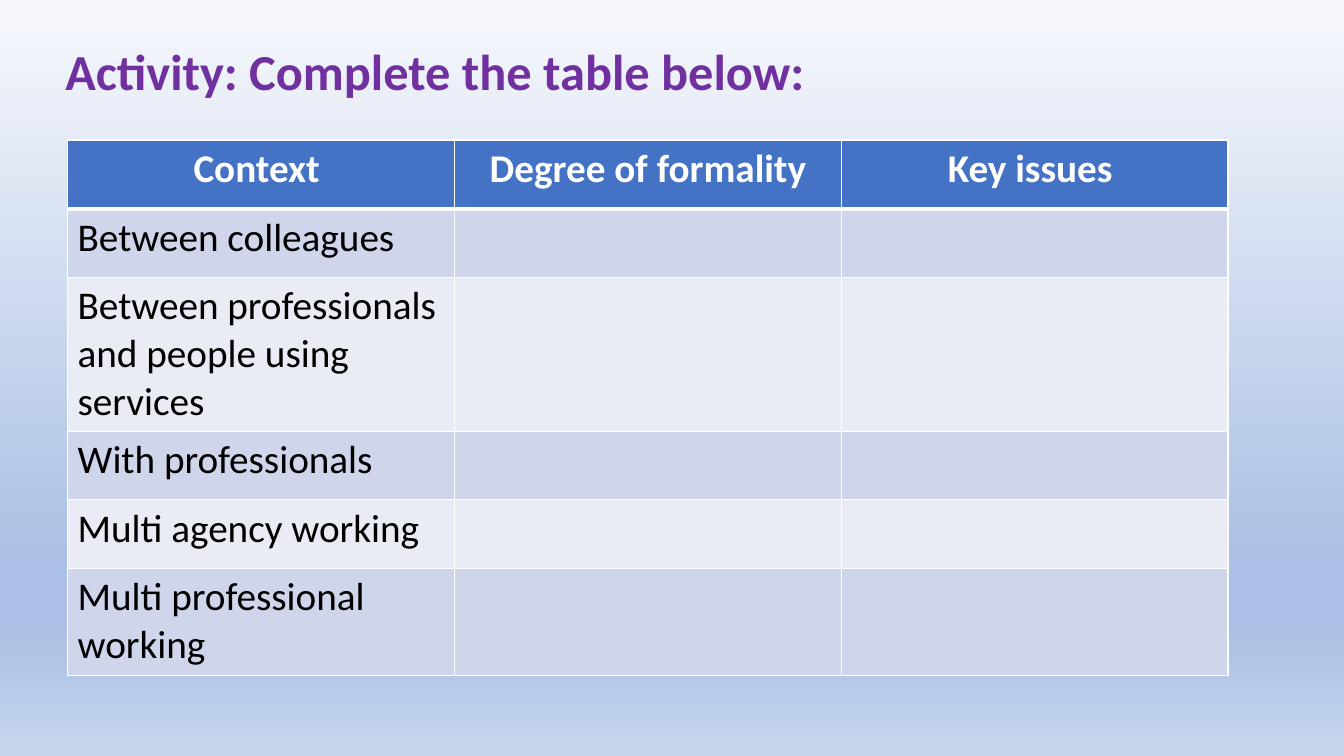
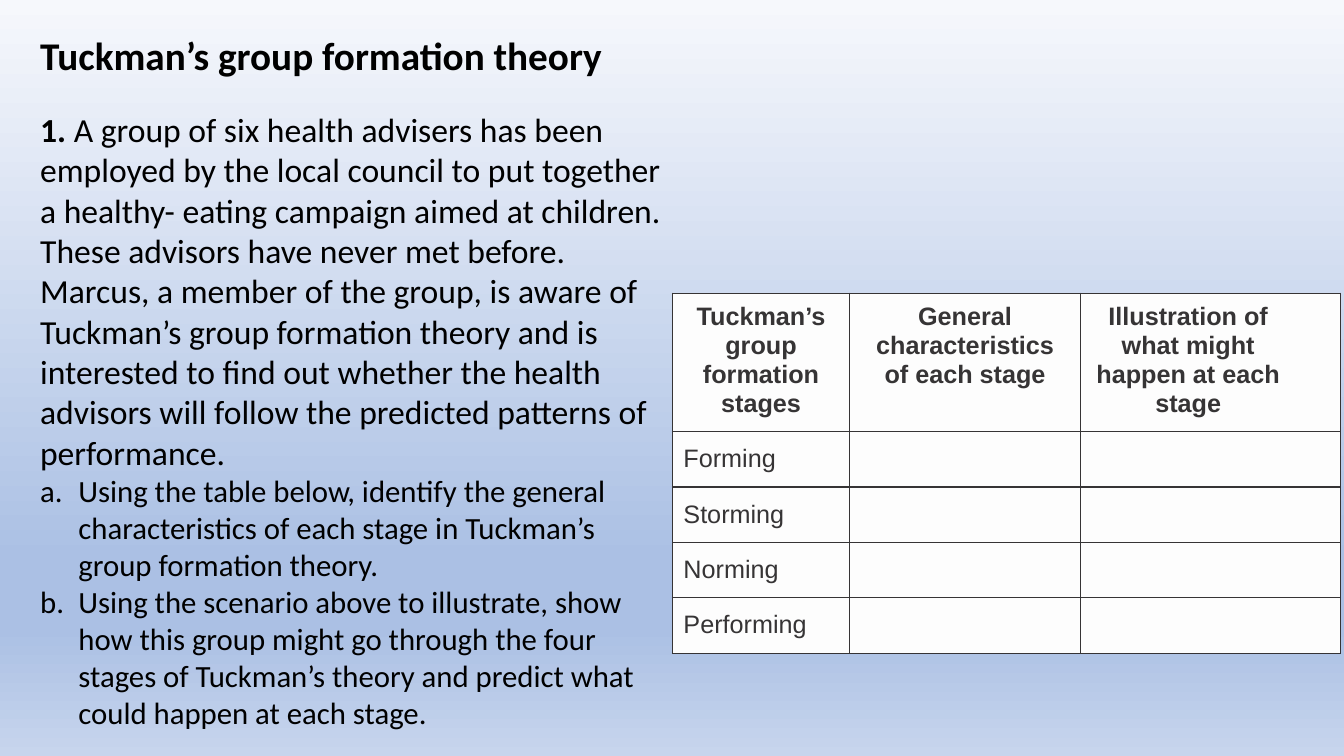
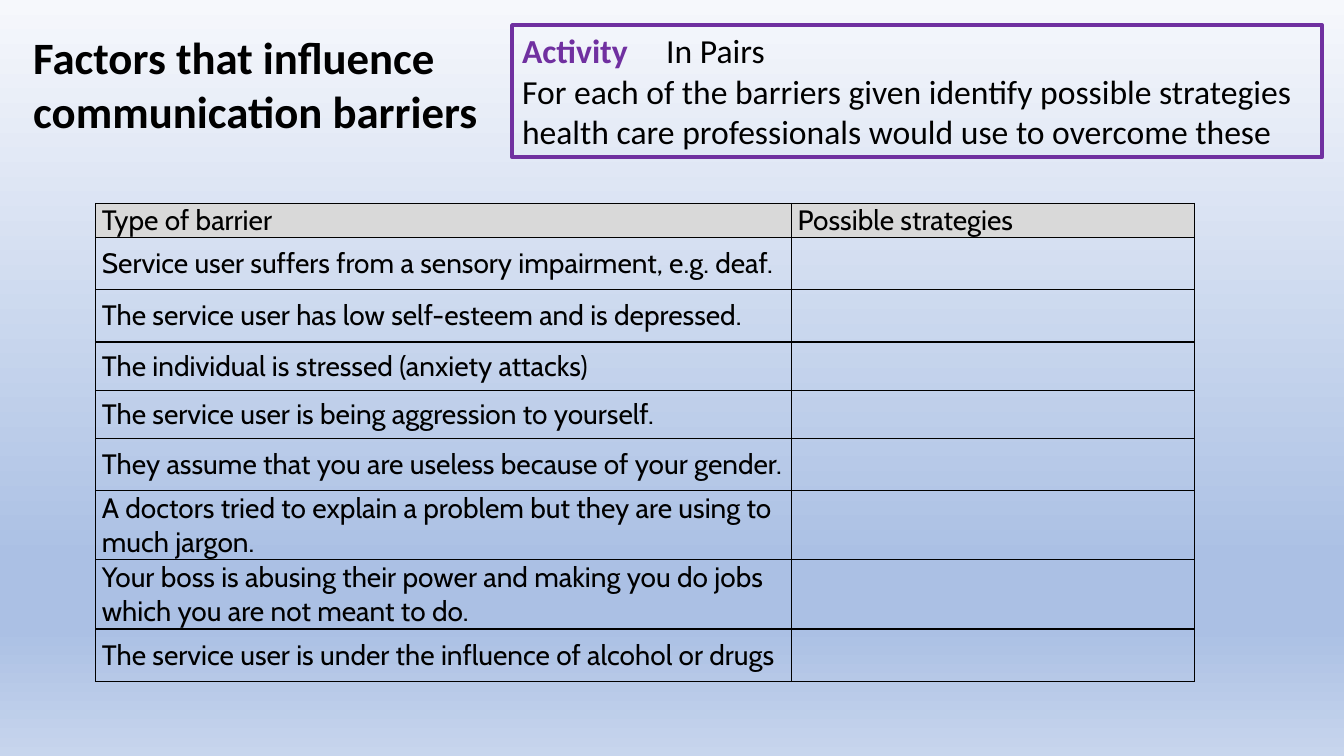
from dataclasses import dataclass, replace

from pptx import Presentation
from pptx.dml.color import RGBColor
from pptx.enum.shapes import MSO_SHAPE
from pptx.enum.text import MSO_ANCHOR, MSO_AUTO_SIZE, PP_ALIGN
from pptx.oxml import parse_xml
from pptx.oxml.ns import nsdecls, qn
from pptx.util import Emu, Inches, Pt

BLACK = RGBColor(0x00, 0x00, 0x00)
WHITE = RGBColor(0xFF, 0xFF, 0xFF)
PURPLE = RGBColor(0x70, 0x30, 0xA0)
BLUE = RGBColor(0x44, 0x72, 0xC4)
BAND_DARK = RGBColor(0xCF, 0xD5, 0xEA)
BAND_LIGHT = RGBColor(0xE9, 0xEB, 0xF5)
CHARCOAL = RGBColor(0x36, 0x34, 0x35)
PAPER = RGBColor(0xFD, 0xFD, 0xFD)
GREY = RGBColor(0xD9, 0xD9, 0xD9)
SKY = [(0, RGBColor(0xF6, 0xF8, 0xFC)), (74, RGBColor(0xAB, 0xC0, 0xE4)),
       (83, RGBColor(0xAB, 0xC0, 0xE4)), (100, RGBColor(0xC7, 0xD5, 0xED))]

WIDTH, HEIGHT = Inches(13.33), Inches(7.5)


@dataclass(frozen=True)
class CellStyle:
    fill: RGBColor = None
    color: RGBColor = BLACK
    font: str = "Calibri"
    size: int = 28
    bold: bool = False
    align: PP_ALIGN = PP_ALIGN.LEFT
    anchor: MSO_ANCHOR = MSO_ANCHOR.TOP
    margins: tuple = (0.1, 0.05, 0.1, 0.05)
    spacing: float = 1.0
    line: RGBColor = BLACK
    bottom: int = 1


def place(x, y, w, h):
    """Turn percentages of the slide's size into lengths."""
    return (Emu(int(WIDTH * x / 100)), Emu(int(HEIGHT * y / 100)),
            Emu(int(WIDTH * w / 100)), Emu(int(HEIGHT * h / 100)))


def paint_background(master):
    fill = master.background.fill
    fill.gradient()
    fill.gradient_angle = 270
    stops = master.element.find(".//" + qn("a:gsLst"))
    for stop in list(stops):
        stops.remove(stop)
    for pos, color in SKY:
        stops.append(parse_xml(
            f'<a:gs {nsdecls("a")} pos="{pos * 1000}">'
            f'<a:srgbClr val="{color}"/></a:gs>'))


def add_run(p, text, size, color=BLACK, bold=False, font="Calibri"):
    r = p.add_run()
    r.text = text
    r.font.name, r.font.size, r.font.bold = font, Pt(size), bold
    r.font.color.rgb = color


def add_text_box(slide, box):
    tf = slide.shapes.add_textbox(*place(*box)).text_frame
    tf.word_wrap = True
    tf.auto_size = MSO_AUTO_SIZE.SHAPE_TO_FIT_TEXT
    return tf


def add_title(slide, box, text, size, color=BLACK):
    add_run(add_text_box(slide, box).paragraphs[0], text, size, color, True)


def add_lettered(tf, text, size):
    p = tf.add_paragraph()
    pPr = p._p.get_or_add_pPr()
    indent = Inches(0.38)
    pPr.set("marL", str(indent))
    pPr.set("indent", str(-indent))
    pPr.append(parse_xml(
        f'<a:buAutoNum {nsdecls("a")} type="alphaLcPeriod"/>'))
    add_run(p, text, size)


def style_cell(cell, style, text):
    tcPr = cell._tc.get_or_add_tcPr()
    for side in "LRTB":
        width = Pt(style.bottom if side == "B" else 1)
        tcPr.append(parse_xml(
            f'<a:ln{side} {nsdecls("a")} w="{width}"><a:solidFill>'
            f'<a:srgbClr val="{style.line}"/></a:solidFill></a:ln{side}>'))
    if style.fill is None:
        cell.fill.background()
    else:
        cell.fill.solid()
        cell.fill.fore_color.rgb = style.fill
    if text:
        (cell.margin_left, cell.margin_top, cell.margin_right,
         cell.margin_bottom) = map(Inches, style.margins)
        cell.vertical_anchor = style.anchor
        p = cell.text_frame.paragraphs[0]
        p.alignment, p.line_spacing = style.align, style.spacing
        add_run(p, text, style.size, style.color, style.bold, style.font)


def add_grid(slide, box, cols, rows, header, labels, head_styles, body_styles):
    """Table with a header row and labels down its first column.

    cols and rows are shares of the box; head_styles go by column and
    body_styles take turns by row.
    """
    x, y, w, h = place(*box)
    table = slide.shapes.add_table(len(rows), len(cols), x, y, w, h).table
    table.first_row = table.horz_banding = False
    for col, share in zip(table.columns, cols):
        col.width = Emu(int(w * share / sum(cols)))
    for row, share in zip(table.rows, rows):
        row.height = Emu(int(h * share / sum(rows)))
    for c, text in enumerate(header):
        style_cell(table.cell(0, c), head_styles[c], text)
    for r, label in enumerate(labels):
        style = body_styles[r % len(body_styles)]
        for c in range(len(cols)):
            style_cell(table.cell(r + 1, c), style, label if c == 0 else "")


def formality_slide(slide):
    dark = CellStyle(fill=BAND_DARK, line=WHITE)
    light = replace(dark, fill=BAND_LIGHT)
    head = replace(dark, fill=BLUE, color=WHITE, bold=True,
                   align=PP_ALIGN.CENTER, bottom=3)
    add_grid(slide, (5.03, 18.53, 86.35, 70.67), (1, 1, 1),
             (9, 9, 20, 9, 9, 14),
             ("Context ", "Degree of formality", "Key issues "),
             ("Between colleagues",
              "Between professionals and people using services",
              "With professionals", "Multi agency working",
              "Multi professional working"),
             [head] * 3, [dark, light])
    add_title(slide, (4.13, 4.67, 76.74, 9.47),
              "Activity: Complete the table below:", 36, PURPLE)


def tuckman_slide(slide):
    tf = add_text_box(slide, (2.25, 3.47, 48.69, 97.87))
    p = tf.paragraphs[0]
    p.space_after = Pt(22)
    add_run(p, "Tuckman’s group formation theory", 28, bold=True)
    p = tf.add_paragraph()
    add_run(p, "1. ", 24, bold=True)
    add_run(p, "A group of six health advisers has been employed by the local "
               "council to put together a healthy- eating campaign aimed at "
               "children. These advisors have never met before. Marcus, a "
               "member of the group, is aware of Tuckman’s group formation "
               "theory and is interested to find out whether the health "
               "advisors will follow the predicted patterns of performance.",
            24)
    for task in (
            "Using the table below, identify the general characteristics of "
            "each stage in Tuckman’s group formation theory.",
            "Using the scenario above to illustrate, show how this group "
            "might go through the four stages of Tuckman’s theory and "
            "predict what could happen at each stage."):
        add_lettered(tf, task, 22)

    body = CellStyle(fill=PAPER, color=CHARCOAL, font="Arial", size=18,
                     margins=(0.11, 0.09, 0, 0), spacing=1.15, line=CHARCOAL)
    head = replace(body, bold=True, align=PP_ALIGN.CENTER, spacing=1.02,
                   margins=(0.15, 0.09, 0.15, 0))
    last_head = replace(head, margins=(0.11, 0.09, 0.55, 0))
    add_grid(slide, (50.03, 38.8, 49.7, 47.6), (1.76, 2.29, 2.58),
             (5, 2, 2, 2, 2),
             ("Tuckman’s group formation stages",
              "General characteristics of each stage",
              "Illustration of what might happen at each stage"),
             ("Forming", "Storming", "Norming", "Performing"),
             [head, head, last_head], [body])


def add_activity_frame(slide, box):
    sp = slide.shapes.add_shape(MSO_SHAPE.RECTANGLE, *place(*box))
    sp.shadow.inherit = False
    sp.fill.background()
    sp.line.color.rgb, sp.line.width = PURPLE, Pt(3)
    tf = sp.text_frame
    tf.word_wrap = True
    tf.auto_size = MSO_AUTO_SIZE.SHAPE_TO_FIT_TEXT
    tf.vertical_anchor = MSO_ANCHOR.TOP
    p = tf.paragraphs[0]
    p.alignment = PP_ALIGN.LEFT
    p._p.get_or_add_pPr().append(parse_xml(
        f'<a:tabLst {nsdecls("a")}>'
        f'<a:tab pos="{Inches(1.43)}" algn="l"/></a:tabLst>'))
    add_run(p, "Activity", 24, PURPLE, True)
    add_run(p, "\tIn Pairs", 24)
    p = tf.add_paragraph()
    p.alignment = PP_ALIGN.LEFT
    add_run(p, "For each of the barriers given identify possible strategies "
               "health care professionals would use to overcome these", 24)


def barriers_slide(slide):
    body = CellStyle(font="Cabin", size=20, anchor=MSO_ANCHOR.MIDDLE,
                     margins=(0.06, 0, 0.06, 0))
    head = replace(body, fill=GREY)
    add_grid(slide, (7.13, 26.93, 81.77, 63.2), (6.9, 4),
             (34, 52, 52, 48, 48, 52, 69, 69, 52),
             ("Type of barrier", "Possible strategies"),
             ("Service user suffers from a sensory impairment, e.g. deaf.",
              "The service user has low self-esteem and is depressed.",
              "The individual is stressed (anxiety attacks)",
              "The service user is being aggression to yourself.",
              "They assume that you are useless because of your gender.",
              "A doctors tried to explain a problem but they are using to "
              "much jargon.",
              "Your boss is abusing their power and making you do jobs which "
              "you are not meant to do.",
              "The service user is under the influence of alcohol or drugs"),
             [head] * 2, [body])
    add_title(slide, (1.73, 3.33, 40.36, 15.73),
              "Factors that influence communication barriers", 32)
    add_activity_frame(slide, (38.11, 3.33, 60.24, 17.47))


def main():
    prs = Presentation()
    prs.slide_width, prs.slide_height = WIDTH, HEIGHT
    paint_background(prs.slide_master)
    for build in (formality_slide, tuckman_slide, barriers_slide):
        build(prs.slides.add_slide(prs.slide_layouts[6]))
    prs.save("out.pptx")


if __name__ == "__main__":
    main()
